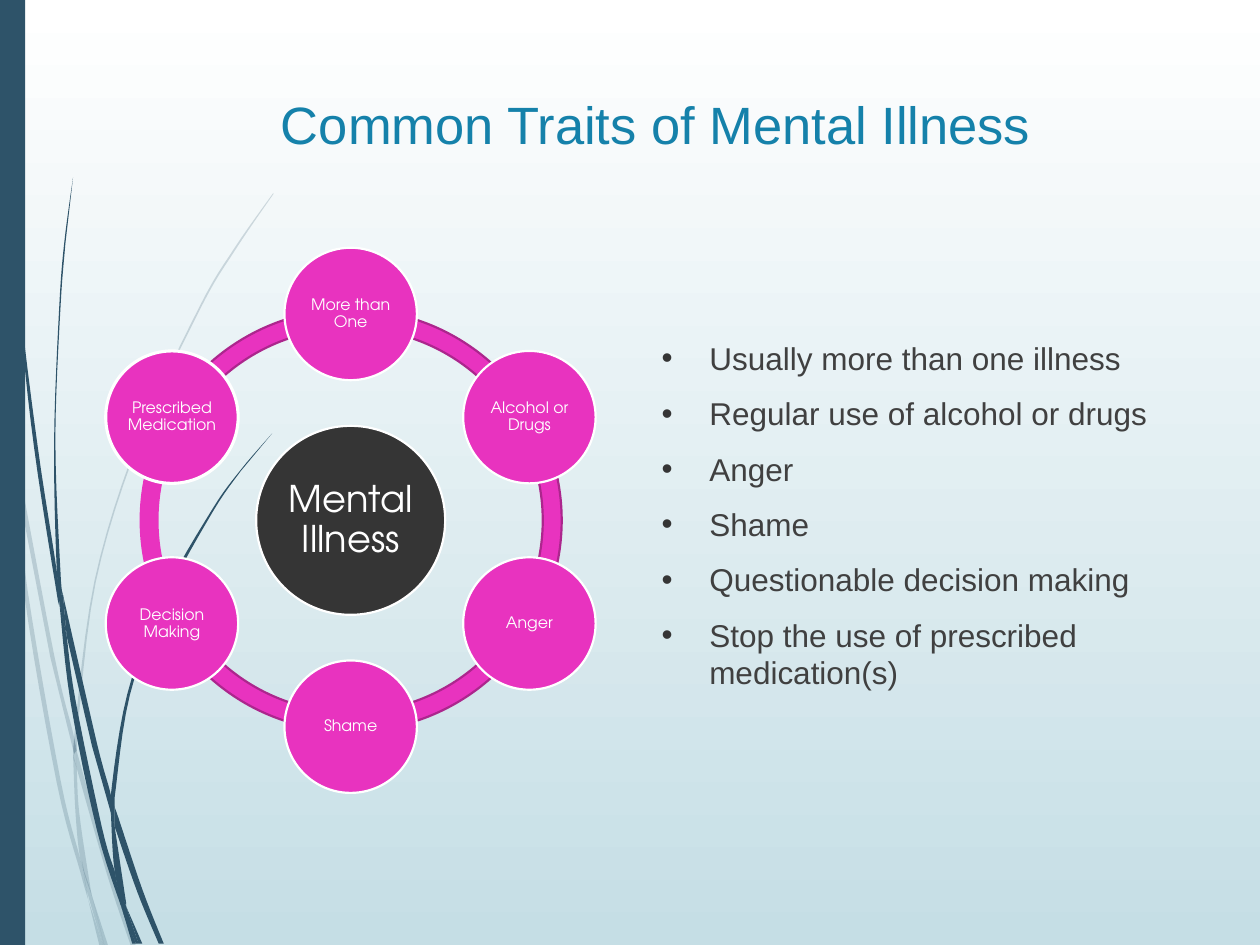
"""Builds the slide on common traits of mental illness."""
import math

import pptx
import pptx.dml.color
import pptx.enum.shapes
import pptx.enum.text
import pptx.oxml.ns
import pptx.util
from pptx.util import Cm

SHAPE = pptx.enum.shapes.MSO_SHAPE
ANCHOR = pptx.enum.text.MSO_ANCHOR
ALIGN = pptx.enum.text.PP_ALIGN
qn = pptx.oxml.ns.qn

NAVY, PINK, PLUM, DARK, WHITE = "2E5369", "E833BF", "AC268D", "353535", "FFFFFF"

PALE_BLADES = [
    ([(0, 282), (6, 322), (8, 350)], [(7, 344), (0, 299)]),
    ([(10, 345), (43, 520), (59, 586), (59, 599)], [(40, 522), (12, 376)]),
    ([(61, 596), (64, 607), (88, 692), (108, 751)], [(104, 751), (85, 694), (61, 610)]),
    ([(73, 711), (86, 751)], [(83, 751)]),
    ([(8, 350), (19, 470), (45, 621), (64, 693), (70, 714)],
     [(69, 707), (64, 683), (48, 619), (22, 469), (12, 376)]),
    ([(58, 599), (60, 646), (64, 683), (73, 711)], [(72, 706), (63, 646), (61, 610)]),
    ([(217, 153), (186, 197), (158, 244), (110, 348), (75, 461), (59, 584), (61, 596)],
     [(61, 584), (76, 462), (111, 349), (159, 245), (187, 198), (217, 154)]),
    ([(70, 714), (79, 751)], [(82, 751)]),
    ([(59, 586), (58, 599), (61, 610)], [(61, 596)]),
    ([(65, 683), (69, 707), (82, 751)], [(83, 751), (73, 711), (67, 692)]),
]
DARK_BLADES = [
    ([(3, 0), (6, 109), (15, 232), (30, 355), (45, 453), (47, 481)],
     [(46, 477), (27, 355), (14, 233), (5, 110), (2, 0)]),
    ([(50, 472), (77, 590), (88, 631), (88, 645)], [(73, 592), (53, 505)]),
    ([(91, 641), (94, 649), (113, 706), (130, 749)], [(126, 749), (109, 708), (91, 656)]),
    ([(47, 477), (56, 557), (77, 659), (97, 722)], [(91, 691), (81, 657), (60, 556), (53, 505)]),
    ([(58, 141), (51, 193), (47, 245), (43, 349), (45, 449), (49, 472)],
     [(50, 472), (48, 453), (44, 349), (48, 245), (52, 193)]),
    ([(100, 719), (113, 749)], [(110, 749)]),
    ([(45, 449), (47, 477), (53, 505)], [(50, 472), (49, 472)]),
    ([(216, 344), (191, 373), (168, 405), (129, 474), (101, 551), (88, 631), (91, 641)],
     [(91, 633), (103, 552), (131, 476), (169, 406), (191, 374)]),
    ([(97, 722), (105, 749)], [(108, 749)]),
    ([(88, 645), (91, 691), (100, 719)], [(100, 716), (91, 656)]),
    ([(88, 631), (88, 645), (91, 656)], [(91, 641)]),
    ([(91, 691), (97, 722), (108, 749)], [(110, 749), (100, 719), (96, 706)]),
]
ARC_STARTS = [210, 150, 90, 30, 330, 270]
TRAITS = ["More than One", "Alcohol or Drugs", "Anger", "Shame",
          "Decision Making", "Prescribed Medication"]
BULLETS = ["Usually more than one illness", "Regular use of alcohol or drugs", "Anger", "Shame",
           "Questionable decision making", "Stop the use of prescribed medication(s)"]


def rgb(value):
    return pptx.dml.color.RGBColor.from_string(value)


def smooth(pts, steps=6):
    """Return points along a Catmull-Rom curve through pts."""
    ends = [pts[0], *pts, pts[-1]]
    curve = []
    for a, b, c, d in zip(ends, ends[1:], ends[2:], ends[3:]):
        for t in (i / steps for i in range(steps)):
            curve.append(tuple(
                (2 * q + (r - p) * t + (2 * p - 5 * q + 4 * r - u) * t ** 2
                 + (3 * q - p - 3 * r + u) * t ** 3) / 2
                for p, q, r, u in zip(a, b, c, d)))
    return curve + [pts[-1]]


class Deck:
    """Holds the style and the current slide."""
    body_font = "Arial"
    ring_font = "TeX Gyre Adventor"

    def __init__(self):
        self.prs = pptx.Presentation()
        self.prs.slide_width, self.prs.slide_height = Cm(25.4), Cm(19.05)
        self.s = self.prs.slides.add_slide(self.prs.slide_layouts[5])

    def background(self, top, bottom):
        fill = self.s.background.fill
        fill.gradient()
        fill.gradient_angle = 270
        for stop, color in zip(fill.gradient_stops, (top, bottom)):
            stop.color.rgb = rgb(color)

    def paint(self, sp, fill, line=None, width=1.25):
        sp.shadow.inherit = False
        sp.fill.solid()
        sp.fill.fore_color.rgb = rgb(fill)
        if line:
            sp.line.color.rgb = rgb(line)
            sp.line.width = pptx.util.Pt(width)
        else:
            sp.line.fill.background()

    def run(self, p, text, font, size, color):
        r = p.add_run()
        r.text = text
        r.font.name, r.font.size = font, pptx.util.Pt(size)
        r.font.color.rgb = rgb(color)

    def shape(self, kind, x, y, w, h, fill, line=None, width=1.25):
        sp = self.s.shapes.add_shape(kind, Cm(x), Cm(y), Cm(w), Cm(h))
        self.paint(sp, fill, line, width)
        return sp

    def blade(self, down, up, opacity):
        pts = [(x * 100, y * 100) for x, y in smooth(down) + smooth(up)]
        fb = self.s.shapes.build_freeform(*pts[0], scale=Cm(0.0254) / 100)
        fb.add_line_segments(pts[1:], close=True)
        sp = fb.convert_to_shape()
        self.paint(sp, NAVY)
        if opacity < 100:
            clr = sp._element.spPr.find(".//" + qn("a:srgbClr"))
            clr.append(clr.makeelement(qn("a:alpha"), {"val": str(opacity * 1000)}))

    def arc(self, cx, cy, d, start, line):
        sp = self.shape(SHAPE.BLOCK_ARC, cx - d / 2, cy - d / 2, d, d, PINK, line)
        for i, value in enumerate((start * 0.6, (start + 60) % 360 * 0.6, 0.045)):
            sp.adjustments[i] = value

    def circle(self, cx, cy, d, text, size, inset, fill, width=1.25):
        sp = self.shape(SHAPE.OVAL, cx - d / 2, cy - d / 2, d, d, fill, WHITE, width)
        tf = sp.text_frame
        tf.word_wrap = True
        tf.vertical_anchor = ANCHOR.MIDDLE
        tf.margin_left = tf.margin_right = tf.margin_top = tf.margin_bottom = Cm(inset)
        p = tf.paragraphs[0]
        p.alignment, p.line_spacing = ALIGN.CENTER, 0.9
        self.run(p, text, self.ring_font, size, WHITE)

    def title(self, text, x, y, w, h):
        sp = self.s.shapes.title
        sp.left, sp.top, sp.width, sp.height = Cm(x), Cm(y), Cm(w), Cm(h)
        tf = sp.text_frame
        tf.vertical_anchor = ANCHOR.TOP
        p = tf.paragraphs[0]
        p.alignment = ALIGN.LEFT
        self.run(p, text, self.body_font, 30, "1581AA")

    def bullets(self, items, x, y, w, h):
        tf = self.s.shapes.add_textbox(Cm(x), Cm(y), Cm(w), Cm(h)).text_frame
        tf.word_wrap = True
        for i, item in enumerate(items):
            p = tf.add_paragraph() if i else tf.paragraphs[0]
            if i:
                p.space_before = pptx.util.Pt(10)
            pPr = p._p.get_or_add_pPr()
            pPr.set("marL", str(Cm(0.96)))
            pPr.set("indent", str(Cm(-0.96)))
            clr = pPr.makeelement(qn("a:buClr"), {})
            clr.append(clr.makeelement(qn("a:srgbClr"), {"val": DARK}))
            pPr.append(clr)
            pPr.append(pPr.makeelement(qn("a:buFont"), {"typeface": self.body_font}))
            pPr.append(pPr.makeelement(qn("a:buChar"), {"char": "•"}))
            self.run(p, item, self.body_font, 18, "404040")


def main():
    deck = Deck()
    deck.background(WHITE, "C5DEE5")
    for blades, opacity in ((PALE_BLADES, 20), (DARK_BLADES, 100)):
        for down, up in blades:
            deck.blade(down, up, opacity)
    deck.shape(SHAPE.RECTANGLE, 0, 0, 0.51, 19.05, NAVY)
    deck.title("Common Traits of Mental Illness", 5.41, 1.73, 18.31, 3.56)
    deck.bullets(BULLETS, 13.09, 6.71, 11.56, 9.14)

    cx, cy, radius = 7.07, 10.49, 4.16
    for start in ARC_STARTS:
        deck.arc(cx, cy, 8.51, start, None if start == 150 else PLUM)
    deck.circle(cx, cy, 3.81, "Mental Illness", 21, 0.08, DARK)
    for i, trait in enumerate(TRAITS):
        angle = math.radians(360 / len(TRAITS) * i)
        width = 1.75 if i == len(TRAITS) - 1 else 1.25
        deck.circle(cx + radius * math.sin(angle), cy - radius * math.cos(angle),
                    2.67, trait, 9, 0.03, PINK, width)
    deck.prs.save("out.pptx")


if __name__ == "__main__":
    main()
